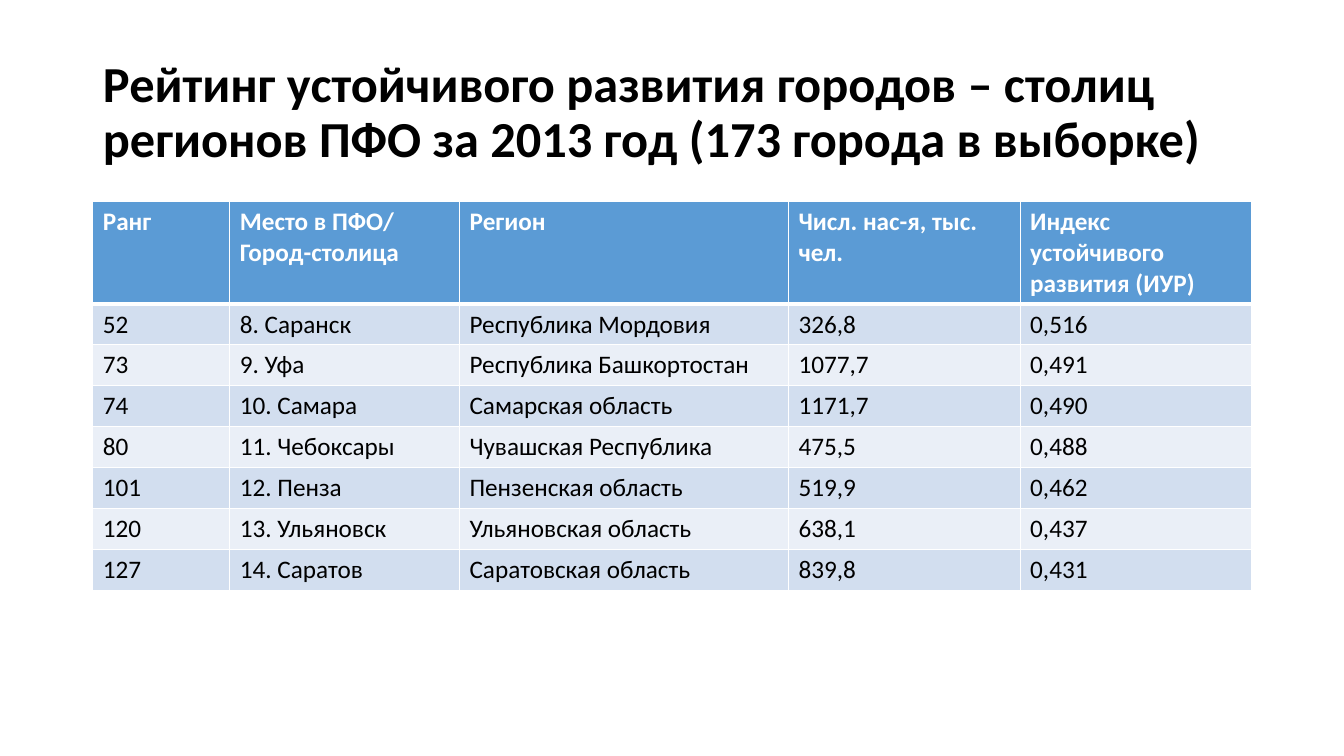
from dataclasses import dataclass

from lxml import etree
from pptx import Presentation
from pptx import util as u
from pptx.dml.color import RGBColor
from pptx.enum import text
from pptx.oxml.ns import qn

# Content
TITLE = ("Рейтинг устойчивого развития городов – столиц регионов ПФО "
         "за 2013 год (173 города в выборке)")
HEADER = ("Ранг", "Место в ПФО/ Город-столица", "Регион",
          "Числ. нас-я, тыс. чел.", "Индекс устойчивого развития (ИУР)")
CITIES = [
    ("52", "8. Саранск", "Республика Мордовия", "326,8", "0,516"),
    ("73", "9. Уфа", "Республика Башкортостан", "1077,7", "0,491"),
    ("74", "10. Самара", "Самарская область", "1171,7", "0,490"),
    ("80", "11. Чебоксары", "Чувашская Республика", "475,5", "0,488"),
    ("101", "12. Пенза", "Пензенская область", "519,9", "0,462"),
    ("120", "13. Ульяновск", "Ульяновская область", "638,1", "0,437"),
    ("127", "14. Саратов", "Саратовская область", "839,8", "0,431"),
]


@dataclass(frozen=True)
class Theme:
    font: str = "Calibri"
    title_size: int = 36
    table_size: int = 18
    ink: str = "000000"
    white: str = "FFFFFF"
    header: str = "5B9BD5"
    bands: tuple = ("D2DEEF", "EAEFF7")
    rule: int = 1
    header_rule: int = 3


T = Theme()

# Layout, in centimetres
LEFT, WIDTH = 2.34, 29.21
TITLE_TOP, TITLE_HEIGHT = 1.02, 3.68
TABLE_TOP = 5.08
COLUMNS = (3.45, 5.79, 8.29, 5.84, 5.84)
HEADER_HEIGHT, ROW_HEIGHT = 2.55, 1.03


def format_text(tf, size, color, bold):
    for p in tf.paragraphs:
        p.alignment = text.PP_ALIGN.LEFT
        for r in p.runs:
            r.font.name = T.font
            r.font.size = u.Pt(size)
            r.font.bold = bold
            r.font.color.rgb = RGBColor.from_string(color)


def add_borders(cell, top, bottom):
    tcPr = cell._tc.get_or_add_tcPr()
    widths = {"lnL": T.rule, "lnR": T.rule, "lnT": top, "lnB": bottom}
    for side, width in widths.items():
        ln = etree.SubElement(tcPr, qn("a:" + side), w=str(u.Pt(width)))
        fill = etree.SubElement(ln, qn("a:solidFill"))
        etree.SubElement(fill, qn("a:srgbClr"), val=T.white)


prs = Presentation()
prs.slide_width, prs.slide_height = u.Cm(33.87), u.Cm(19.05)
s = prs.slides.add_slide(prs.slide_layouts[5])

# Title
title = s.shapes.title
title.left, title.top = u.Cm(LEFT), u.Cm(TITLE_TOP)
title.width, title.height = u.Cm(WIDTH), u.Cm(TITLE_HEIGHT)
tf = title.text_frame
tf.text = TITLE
tf.word_wrap = True
tf.auto_size = text.MSO_AUTO_SIZE.NONE
tf.vertical_anchor = text.MSO_ANCHOR.MIDDLE
tf.paragraphs[0].line_spacing = 0.9
format_text(tf, T.title_size, T.ink, True)

# Ranking table
rows = [HEADER, *CITIES]
heights = [HEADER_HEIGHT] + [ROW_HEIGHT] * len(CITIES)
table = s.shapes.add_table(len(rows), len(HEADER), u.Cm(LEFT), u.Cm(TABLE_TOP),
                           u.Cm(WIDTH), u.Cm(sum(heights))).table
for column, width in zip(table.columns, COLUMNS):
    column.width = u.Cm(width)

for i, values in enumerate(rows):
    table.rows[i].height = u.Cm(heights[i])
    is_header = i == 0
    fill = T.header if is_header else T.bands[(i - 1) % 2]
    top = T.header_rule if i == 1 else T.rule
    bottom = T.header_rule if is_header else T.rule
    for j, value in enumerate(values):
        cell = table.cell(i, j)
        cell.text_frame.text = value
        format_text(cell.text_frame, T.table_size,
                    T.white if is_header else T.ink, is_header)
        add_borders(cell, top, bottom)
        cell.fill.solid()
        cell.fill.fore_color.rgb = RGBColor.from_string(fill)

prs.save("out.pptx")
